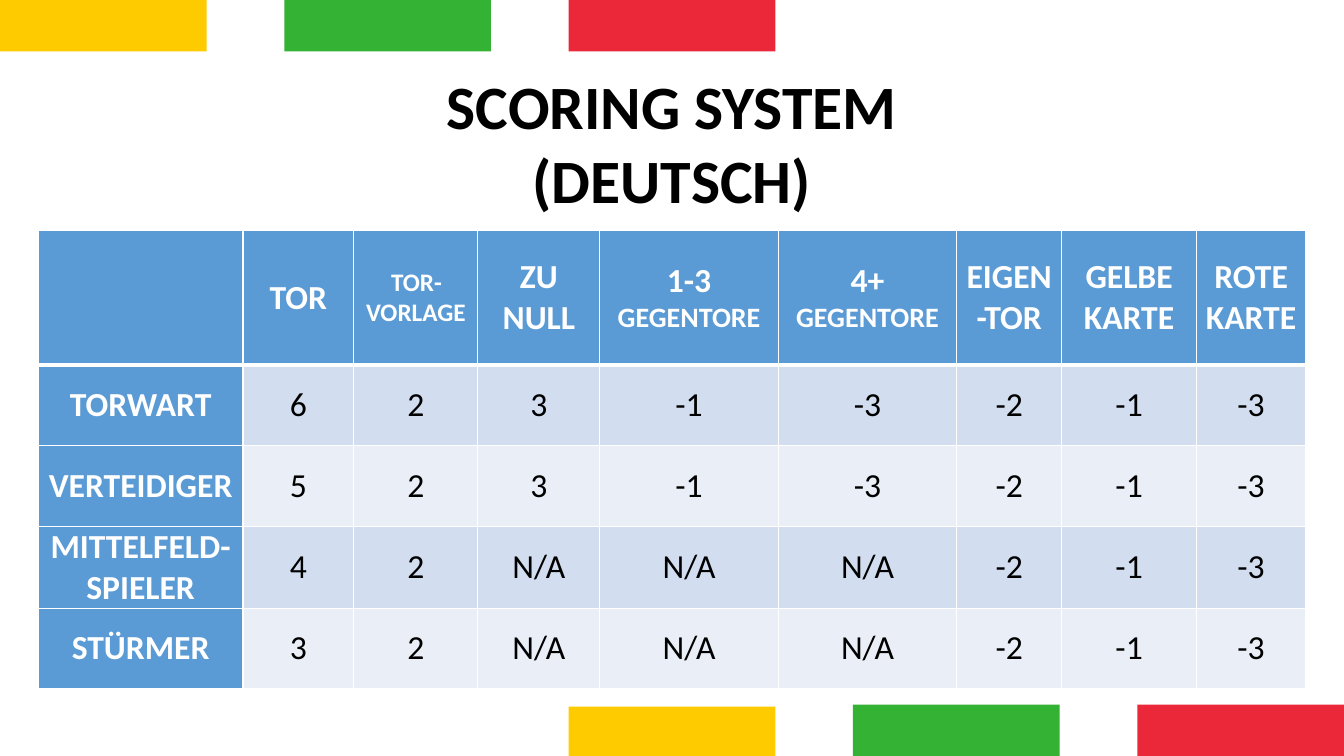
from dataclasses import dataclass

from lxml import etree
from pptx import Presentation
from pptx import util as u
from pptx.dml.color import RGBColor
from pptx.enum import shapes, text
from pptx.oxml.ns import qn


@dataclass(frozen=True)
class Theme:
    font: str = "Calibri"
    yellow: str = "FECB00"
    green: str = "34B233"
    red: str = "EA2839"
    header: str = "5B9BD5"
    bands: tuple[str, str] = ("D2DEEF", "EAEFF7")
    light: str = "FFFFFF"
    dark: str = "000000"
    title: int = 44
    body: int = 24
    medium: int = 20
    small: int = 18
    rule: int = 1
    heavy_rule: int = 3


@dataclass(frozen=True)
class Span:
    words: str
    size: int


@dataclass(frozen=True)
class Stripe:
    column: int
    top: float
    color: str


THEME = Theme()
WIDTH, HEIGHT = u.Inches(13.33), u.Inches(7.5)
STRIPE_W, STRIPE_H = u.Inches(2.05), u.Inches(0.51)
STRIPE_STEP = (WIDTH - STRIPE_W) // 4

STRIPES = [
    Stripe(0, 0, THEME.yellow),
    Stripe(1, 0, THEME.green),
    Stripe(2, 0, THEME.red),
    Stripe(2, 7.01, THEME.yellow),
    Stripe(3, 6.99, THEME.green),
    Stripe(4, 6.99, THEME.red),
]

COLUMNS = (2.03, 1.1, 1.23, 1.21, 1.77, 1.77, 1.04, 1.34, 1.08)
ROWS = (1.33, 0.8, 0.8, 0.8, 0.8)
HEADINGS = [
    [],
    [Span("TOR", THEME.body)],
    [Span("TOR-VORLAGE", THEME.small)],
    [Span("ZU NULL", THEME.body)],
    [Span("1-3 ", THEME.body), Span("GEGENTORE", THEME.medium)],
    [Span("4+ ", THEME.body), Span("GEGENTORE", THEME.medium)],
    [Span("EIGEN-TOR", THEME.body)],
    [Span("GELBE KARTE", THEME.body)],
    [Span("ROTE KARTE", THEME.body)],
]
CARDS = ["-2", "-1", "-3"]
CONCEDED = ["3", "-1", "-3"]
NOT_SCORED = ["N/A"] * 3
SCORES = [
    ["TORWART", "6", "2", *CONCEDED, *CARDS],
    ["VERTEIDIGER", "5", "2", *CONCEDED, *CARDS],
    ["MITTELFELD-SPIELER", "4", "2", *NOT_SCORED, *CARDS],
    ["STÜRMER", "3", "2", *NOT_SCORED, *CARDS],
]


def style_font(font, size: int, color: str, bold: bool) -> None:
    font.name, font.size, font.bold = THEME.font, u.Pt(size), bold
    font.color.rgb = RGBColor.from_string(color)


def draw_stripe(slide, stripe: Stripe) -> None:
    sp = slide.shapes.add_shape(
        shapes.MSO_SHAPE.RECTANGLE, stripe.column * STRIPE_STEP,
        u.Inches(stripe.top), STRIPE_W, STRIPE_H)
    sp.shadow.inherit = False
    sp.fill.solid()
    sp.fill.fore_color.rgb = RGBColor.from_string(stripe.color)
    sp.line.fill.background()


def draw_title(slide, lines: list[str]) -> None:
    sp = slide.shapes.title
    sp.left, sp.top = u.Inches(3.75), u.Inches(0.62)
    sp.width, sp.height = u.Inches(5.83), u.Inches(1.58)
    tf = sp.text_frame
    tf.text = "\n".join(lines)
    tf.word_wrap = True
    tf.auto_size = text.MSO_AUTO_SIZE.NONE
    tf.vertical_anchor = text.MSO_ANCHOR.TOP
    for p in tf.paragraphs:
        p.alignment = text.PP_ALIGN.CENTER
        style_font(p.font, THEME.title, THEME.dark, True)


def rule_cell(cell, top: int, bottom: int) -> None:
    props = cell._tc.get_or_add_tcPr()
    weights = {"a:lnL": THEME.rule, "a:lnR": THEME.rule, "a:lnT": top, "a:lnB": bottom}
    for tag, weight in weights.items():
        line = etree.SubElement(props, qn(tag), w=str(u.Pt(weight)))
        fill = etree.SubElement(line, qn("a:solidFill"))
        etree.SubElement(fill, qn("a:srgbClr"), val=THEME.light)


def fill_cell(cell, spans: list[Span], row: int, column: int) -> None:
    heading = row == 0 or column == 0
    rule_cell(cell,
              THEME.heavy_rule if row == 1 else THEME.rule,
              THEME.heavy_rule if row == 0 else THEME.rule)
    cell.fill.solid()
    cell.fill.fore_color.rgb = RGBColor.from_string(
        THEME.header if heading else THEME.bands[(row - 1) % 2])
    cell.vertical_anchor = text.MSO_ANCHOR.MIDDLE
    cell.margin_left = cell.margin_right = u.Inches(0.07)
    cell.margin_top = cell.margin_bottom = 0
    p = cell.text_frame.paragraphs[0]
    p.alignment = text.PP_ALIGN.CENTER
    style_font(p.font, spans[0].size if spans else THEME.body,
               THEME.light if heading else THEME.dark, heading)
    for span in spans:
        r = p.add_run()
        r.text = span.words
        if span.size != spans[0].size:
            r.font.size = u.Pt(span.size)


def draw_scores(slide) -> None:
    frame = slide.shapes.add_table(
        len(ROWS), len(COLUMNS), u.Inches(0.38), u.Inches(2.29),
        u.Inches(sum(COLUMNS)), u.Inches(sum(ROWS)))
    table = frame.table
    table.first_col = True
    for column, width in zip(table.columns, COLUMNS):
        column.width = u.Inches(width)
    for row, height in zip(table.rows, ROWS):
        row.height = u.Inches(height)
    body = [[[Span(words, THEME.body)] for words in row] for row in SCORES]
    for i, row in enumerate([HEADINGS, *body]):
        for j, spans in enumerate(row):
            fill_cell(table.cell(i, j), spans, i, j)


def main() -> None:
    prs = Presentation()
    prs.slide_width, prs.slide_height = WIDTH, HEIGHT
    s = prs.slides.add_slide(prs.slide_layouts[5])
    for stripe in STRIPES:
        draw_stripe(s, stripe)
    draw_scores(s)
    draw_title(s, ["SCORING SYSTEM", "(DEUTSCH)"])
    prs.save("out.pptx")


if __name__ == "__main__":
    main()
